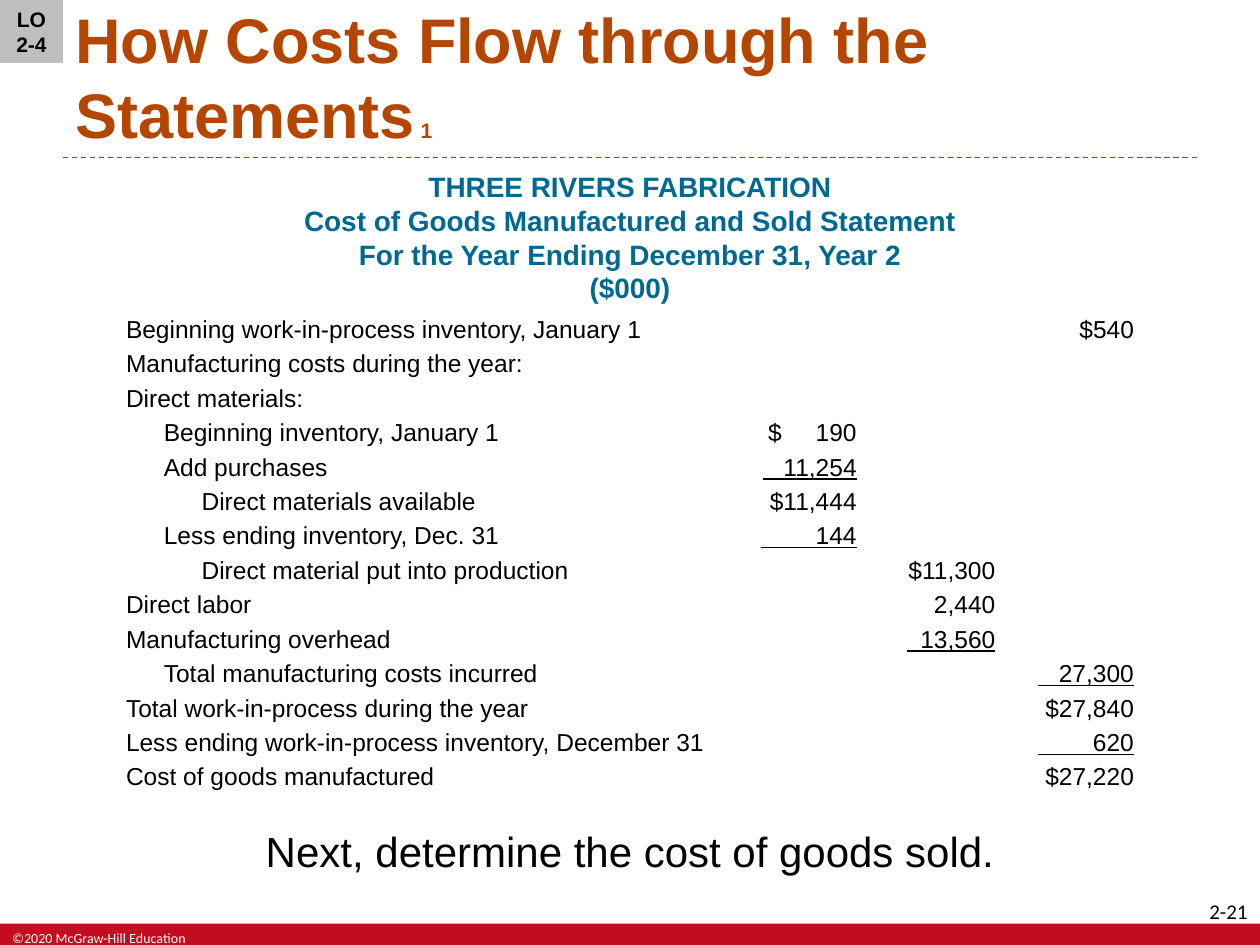
from lxml import etree
from pptx import Presentation
from pptx.dml.color import RGBColor
from pptx.enum.dml import MSO_LINE
from pptx.enum.shapes import MSO_CONNECTOR, MSO_SHAPE
from pptx.enum.text import MSO_ANCHOR, PP_ALIGN
from pptx.oxml.ns import qn
from pptx.util import Inches, Pt

LEFT, CENTER, RIGHT = PP_ALIGN.LEFT, PP_ALIGN.CENTER, PP_ALIGN.RIGHT
TOP, MIDDLE, BOTTOM = MSO_ANCHOR.TOP, MSO_ANCHOR.MIDDLE, MSO_ANCHOR.BOTTOM
RECTANGLE, STRAIGHT, DASH = MSO_SHAPE.RECTANGLE, MSO_CONNECTOR.STRAIGHT, MSO_LINE.DASH

BLACK = RGBColor(0x00, 0x00, 0x00)
WHITE = RGBColor(0xFF, 0xFF, 0xFF)
RED = RGBColor(0xC3, 0x0C, 0x20)
GRAY = RGBColor(0xBE, 0xBE, 0xBE)
BLUE = RGBColor(0x00, 0x64, 0xC8)
ORANGE = RGBColor(0xB4, 0x46, 0x00)
TEAL = RGBColor(0x00, 0x69, 0x91)

TABLE_SIZE = 14
COLUMN_WIDTHS = (4.9, 1.1, 1.1, 1.1)
ROW_HEIGHT = 0.26
INDENT = 0.3

HEADING = (
    "THREE RIVERS FABRICATION",
    "Cost of Goods Manufactured and Sold Statement",
    "For the Year Ending December 31, Year 2",
    "($000)",
)

# label, indent level, amount column, amount, underlined
STATEMENT = (
    ("Beginning work-in-process inventory, January 1", 0, 3, "$540", False),
    ("Manufacturing costs during the year:", 0, None, "", False),
    ("Direct materials:", 0, None, "", False),
    ("Beginning inventory, January 1", 1, 1, "$     190", False),
    ("Add purchases", 1, 1, "   11,254", True),
    ("Direct materials available", 2, 1, "$11,444", False),
    ("Less ending inventory, Dec. 31", 1, 1, "        144", True),
    ("Direct material put into production", 2, 2, "$11,300", False),
    ("Direct labor", 0, 2, "2,440", False),
    ("Manufacturing overhead", 0, 2, "  13,560", True),
    ("Total manufacturing costs incurred", 1, 3, "   27,300", True),
    ("Total work-in-process during the year", 0, 3, "$27,840", False),
    ("Less ending work-in-process inventory, December 31", 0, 3, "        620", True),
    ("Cost of goods manufactured", 0, 3, "$27,220", False),
)


def add_span(para, text, size, color=BLACK, bold=False, font="Arial", underline=False):
    span = para.add_run()
    span.text = text
    span.font.name = font
    span.font.size = Pt(size)
    span.font.bold = bold
    span.font.underline = underline
    span.font.color.rgb = color


def first_para(box, align, anchor):
    frame = box.text_frame
    frame.word_wrap = True
    frame.vertical_anchor = anchor
    para = frame.paragraphs[0]
    para.alignment = align
    return para


def add_text(page, left, top, width, height, align=LEFT, anchor=TOP):
    box = page.shapes.add_textbox(Inches(left), Inches(top), Inches(width), Inches(height))
    return first_para(box, align, anchor)


def add_block(page, left, top, width, height, color):
    block = page.shapes.add_shape(
        RECTANGLE, Inches(left), Inches(top), Inches(width), Inches(height))
    block.shadow.inherit = False
    block.fill.solid()
    block.fill.fore_color.rgb = color
    block.line.fill.background()
    return block


def add_rule(page, left, right, top):
    rule = page.shapes.add_connector(
        STRAIGHT, Inches(left), Inches(top), Inches(right), Inches(top))
    rule.line.color.rgb = BLUE
    rule.line.width = Pt(0.75)
    rule.line.dash_style = DASH
    etree.SubElement(rule._element.spPr, qn("a:effectLst"))


def format_cell(cell):
    cell.fill.background()
    cell.margin_left = cell.margin_right = Inches(0.1)
    cell.margin_top = cell.margin_bottom = Inches(0.02)
    para = cell.text_frame.paragraphs[0]
    para.line_spacing = 0.95
    etree.SubElement(para._p, qn("a:endParaRPr"), sz=str(TABLE_SIZE * 100))
    return para


def add_statement(page):
    table = page.shapes.add_table(
        len(STATEMENT), len(COLUMN_WIDTHS), Inches(0.9), Inches(2.5),
        Inches(sum(COLUMN_WIDTHS)), Inches(ROW_HEIGHT * len(STATEMENT))).table
    table.first_row = False
    table.horz_banding = False
    for column, width in zip(table.columns, COLUMN_WIDTHS):
        column.width = Inches(width)
    for row, (label, level, place, amount, underline) in zip(table.rows, STATEMENT):
        row.height = Inches(ROW_HEIGHT)
        paras = [format_cell(cell) for cell in row.cells]
        if level:
            paras[0]._p.get_or_add_pPr().set("marL", str(Inches(INDENT * level)))
        add_span(paras[0], label, TABLE_SIZE)
        if place:
            paras[place].alignment = RIGHT
            add_span(paras[place], amount, TABLE_SIZE, underline=underline)


def add_footer(page):
    add_block(page, 0, 7.33, 10, 0.17, RED)
    copyright_line = add_text(page, 0, 7.33, 1.6, 0.17)
    add_span(copyright_line, "©2020 McGraw-Hill Education", 8, WHITE, font="Calibri")
    page_number = add_text(page, 9.46, 7.08, 0.54, 0.2, RIGHT)
    add_span(page_number, "2-21", 12, font="Calibri")


def add_heading(page):
    para = add_text(page, 0.5, 1.3, 9, 1.2, CENTER)
    for index, text in enumerate(HEADING):
        if index:
            para.add_line_break()
        add_span(para, text, 16, TEAL, bold=True)


def main():
    deck = Presentation()
    deck.slide_width, deck.slide_height = Inches(10), Inches(7.5)
    page = deck.slides.add_slide(deck.slide_layouts[6])

    add_footer(page)
    add_rule(page, 0.5, 9.5, 1.25)
    title = add_text(page, 0.5, 0.05, 9, 1.2, anchor=BOTTOM)
    add_span(title, "How Costs Flow through the Statements", 36, ORANGE, bold=True)
    add_span(title, " 1", 12, ORANGE, bold=True)
    add_heading(page)
    add_statement(page)
    closing = add_text(page, 0.5, 6.5, 9, 0.5, CENTER)
    add_span(closing, "Next, determine the cost of goods sold.", 24)
    objective = add_block(page, 0, 0, 0.5, 0.5, GRAY)
    add_span(first_para(objective, CENTER, MIDDLE), "LO 2-4", 12, bold=True)

    deck.save("out.pptx")


if __name__ == "__main__":
    main()
